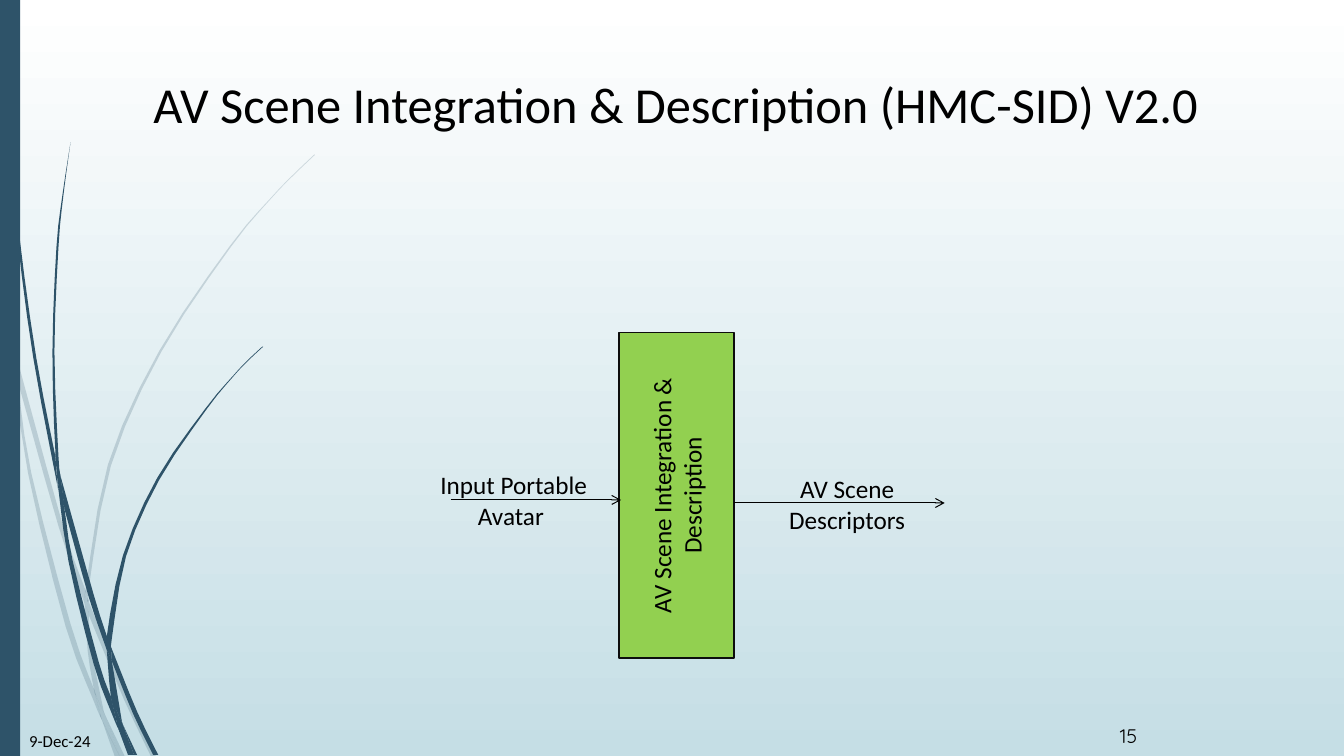
from lxml import etree
from pptx import Presentation
from pptx.dml.color import RGBColor
from pptx.enum.shapes import MSO_CONNECTOR, MSO_SHAPE
from pptx.enum.text import MSO_ANCHOR, PP_ALIGN
from pptx.oxml.ns import qn
from pptx.util import Inches, Pt

LEFT, CENTER = PP_ALIGN.LEFT, PP_ALIGN.CENTER
TOP, MIDDLE = MSO_ANCHOR.TOP, MSO_ANCHOR.MIDDLE
RECTANGLE, STRAIGHT = MSO_SHAPE.RECTANGLE, MSO_CONNECTOR.STRAIGHT

# Content
WIDTH, HEIGHT = 13.33, 7.5
COLORS = {"text": "000000", "stem": "2E5369", "module": "92D050",
          "border": "0D0D0D", "sky": "FFFFFF", "ground": "C5DEE5"}
TITLE = "AV Scene Integration & Description (HMC-SID) V2.0"
MODULE = "AV Scene Integration & Description"
DATE, NUMBER = "9-Dec-24", "15"
MODULE_BOX = (6.14, 3.3, 1.14, 3.23)
# Each flow: label lines, label box, arrow start, arrow end
FLOWS = [
    (["Input Portable", "Avatar "], (4.22, 4.61, 1.75, 0.71), (4.47, 4.96), (6.16, 4.96)),
    (["AV Scene ", "Descriptors "], (7.37, 4.65, 2.12, 0.71), (7.28, 4.99), (9.37, 4.99)),
]
# Grass blades: the knots of the two edges of each, joined end to end
PALE_BLADES = [
    ([(0.11, 3.5), (0.09, 3.22), (0, 2.82)], [(0, 2.99), (0.1, 3.44), (0.11, 3.5)]),
    ([(0.14, 3.45), (0.62, 5.2), (0.85, 5.86)],
     [(0.84, 5.99), (0.58, 5.22), (0.17, 3.76)]),
    ([(0.88, 5.96), (0.92, 6.07), (1.27, 6.92), (1.55, 7.51)],
     [(1.5, 7.51), (1.23, 6.94), (0.88, 6.1)]),
    ([(1.19, 7.51), (1.24, 7.51)], [(1.05, 7.11)]),
    ([(0.11, 3.5), (0.17, 3.76), (0.31, 4.69), (0.7, 6.19), (0.93, 6.83)],
     [(0.99, 7.07), (1.01, 7.14), (0.92, 6.93), (0.65, 6.21), (0.28, 4.7), (0.11, 3.5)]),
    ([(0.84, 5.99), (0.87, 6.46), (0.93, 6.83), (0.96, 6.92), (1.05, 7.11)],
     [(1.03, 7.06), (0.91, 6.46), (0.88, 6.1), (0.88, 6.08)]),
    ([(0.88, 5.96), (0.88, 5.84), (1.1, 4.62), (1.6, 3.49), (2.29, 2.45),
      (2.68, 1.98), (2.9, 1.75), (3.12, 1.54)],
     [(3.12, 1.53), (2.89, 1.75), (2.68, 1.97), (2.28, 2.44), (1.58, 3.48),
      (1.07, 4.61), (0.85, 5.84), (0.85, 5.86)]),
    ([(1.01, 7.14), (1.14, 7.51)], [(1.19, 7.51)]),
    ([(0.88, 6.08), (0.88, 6.1), (0.88, 5.96)], [(0.85, 5.86), (0.84, 5.99)]),
    ([(0.96, 6.92), (0.93, 6.83), (0.99, 7.07), (1.01, 7.14), (1.19, 7.51)],
     [(1.19, 7.51), (1.05, 7.11)]),
]
DARK_BLADES = [
    ([(0.04, 0), (0.05, 0.48), (0.08, 1.09), (0.19, 2.32), (0.36, 3.55), (0.55, 4.53)],
     [(0.57, 4.81), (0.56, 4.77), (0.33, 3.55), (0.17, 2.33), (0.07, 1.1),
      (0.04, 0.48), (0.03, 0)]),
    ([(0.6, 4.72), (0.93, 5.9), (1.06, 6.31)], [(1.06, 6.45), (0.88, 5.92), (0.64, 5.05)]),
    ([(1.1, 6.41), (1.13, 6.49), (1.36, 7.06), (1.57, 7.49)],
     [(1.52, 7.49), (1.32, 7.08), (1.11, 6.56)]),
    ([(0.57, 4.77), (0.64, 5.05), (0.72, 5.56), (0.98, 6.57), (1.1, 6.91)],
     [(1.16, 7.17), (1.17, 7.22), (1.11, 7.08), (0.93, 6.59), (0.68, 5.57), (0.57, 4.77)]),
    ([(0.6, 4.72), (0.58, 4.53), (0.54, 3.49), (0.58, 2.45), (0.63, 1.93), (0.7, 1.41)],
     [(0.7, 1.41), (0.62, 1.93), (0.56, 2.45), (0.52, 3.49), (0.55, 4.49), (0.6, 4.72)]),
    ([(1.33, 7.49), (1.36, 7.49)], [(1.22, 7.19)]),
    ([(0.57, 4.77), (0.64, 5.05), (0.6, 4.72)], [(0.55, 4.49), (0.55, 4.53)]),
    ([(1.11, 6.33), (1.25, 5.52), (1.58, 4.76), (2.05, 4.06), (2.31, 3.74),
      (2.45, 3.59), (2.61, 3.44)],
     [(2.6, 3.44), (2.45, 3.58), (2.31, 3.73), (2.04, 4.05), (1.56, 4.74),
      (1.22, 5.51), (1.06, 6.31), (1.1, 6.41)]),
    ([(1.17, 7.22), (1.27, 7.49)], [(1.31, 7.49)]),
    ([(1.06, 6.45), (1.1, 6.91), (1.16, 7.06), (1.22, 7.19)],
     [(1.21, 7.16), (1.11, 6.56), (1.09, 6.51)]),
    ([(1.06, 6.45), (1.09, 6.51), (1.11, 6.56)], [(1.1, 6.41), (1.06, 6.31)]),
    ([(1.16, 7.06), (1.1, 6.91), (1.16, 7.17), (1.17, 7.22), (1.3, 7.49)],
     [(1.33, 7.49), (1.22, 7.19)]),
]


def color(name):
    return RGBColor.from_string(COLORS[name])


def box(values):
    return [Inches(value) for value in values]


def write(shape, *lines, size=18, font="Calibri", align=LEFT, anchor=TOP, inset_top=0.05):
    frame = shape.text_frame
    frame.word_wrap = True
    frame.vertical_anchor = anchor
    frame.margin_left = frame.margin_right = Inches(0.1)
    frame.margin_top, frame.margin_bottom = Inches(inset_top), Inches(0.05)
    for index, line in enumerate(lines):
        paragraph = frame.paragraphs[0] if index == 0 else frame.add_paragraph()
        paragraph.alignment = align
        run = paragraph.add_run()
        run.text = line
        run.font.size, run.font.name = Pt(size), font
        run.font.color.rgb = color("text")


def smooth(knots, steps=3):
    """Catmull-Rom curve through the knots."""
    padded = [knots[0], *knots, knots[-1]]
    points = [knots[0]]
    for a, b, c, d in zip(padded, padded[1:], padded[2:], padded[3:]):
        for step in range(1, steps + 1):
            t = step / steps
            points.append(tuple(
                (2 * q + (r - p) * t + (2 * p - 5 * q + 4 * r - s) * t ** 2
                 + (3 * q - p - 3 * r + s) * t ** 3) / 2
                for p, q, r, s in zip(a, b, c, d)))
    return points


def fill(shape, name, opacity=100):
    shape.shadow.inherit = False
    shape.fill.solid()
    shape.fill.fore_color.rgb = color(name)
    shape.line.fill.background()
    if opacity < 100:
        rgb = shape.fill._xPr.find(".//" + qn("a:srgbClr"))
        etree.SubElement(rgb, qn("a:alpha"), val=str(opacity * 1000))


def add_blade(shapes, edges, opacity):
    outline = [box(point) for edge in edges for point in smooth(edge)]
    builder = shapes.build_freeform(*outline[0])
    builder.add_line_segments(outline[1:], close=True)
    fill(builder.convert_to_shape(), "stem", opacity)


def add_arrow(shapes, start, end):
    arrow = shapes.add_connector(STRAIGHT, *box(start + end))
    arrow.line.color.rgb = color("text")
    arrow.line.width = Pt(0.75)
    etree.SubElement(arrow.line._get_or_add_ln(), qn("a:tailEnd"), type="arrow")
    etree.SubElement(arrow._element.spPr, qn("a:effectLst"))


def main():
    presentation = Presentation()
    presentation.slide_width, presentation.slide_height = box((WIDTH, HEIGHT))
    slide = presentation.slides.add_slide(presentation.slide_layouts[5])
    shapes = slide.shapes

    # Background and grass
    background = slide.background.fill
    background.gradient()
    background.gradient_angle = 270
    for stop, name, position in zip(background.gradient_stops, ("sky", "ground"), (0, 1)):
        stop.color.rgb, stop.position = color(name), position
    for blades, opacity in ((PALE_BLADES, 20), (DARK_BLADES, 100)):
        for edges in blades:
            add_blade(shapes, edges, opacity)
    fill(shapes.add_shape(RECTANGLE, *box((0, 0, 0.2, HEIGHT))), "stem")

    # Title, date and slide number
    title = shapes.title
    title.left, title.top, title.width, title.height = box((1.42, 0.68, 11.16, 1.4))
    write(title, TITLE, size=36)
    write(shapes.add_textbox(*box((0.19, 7.2, 1.09, 0.3))), DATE, size=12)
    write(shapes.add_textbox(*box((11.01, 7.18, 0.61, 0.3))), NUMBER,
          size=14, font="Quicksand", inset_top=0)

    # Module with its input and output
    module = shapes.add_shape(RECTANGLE, *box(MODULE_BOX))
    fill(module, "module")
    module.line.color.rgb = color("border")
    module.line.width = Pt(1.25)
    write(module, MODULE, align=CENTER, anchor=MIDDLE)
    module.text_frame._txBody.bodyPr.set("vert", "vert270")
    for lines, place, start, end in FLOWS:
        write(shapes.add_textbox(*box(place)), *lines, align=CENTER)
        add_arrow(shapes, start, end)

    presentation.save("out.pptx")


if __name__ == "__main__":
    main()
